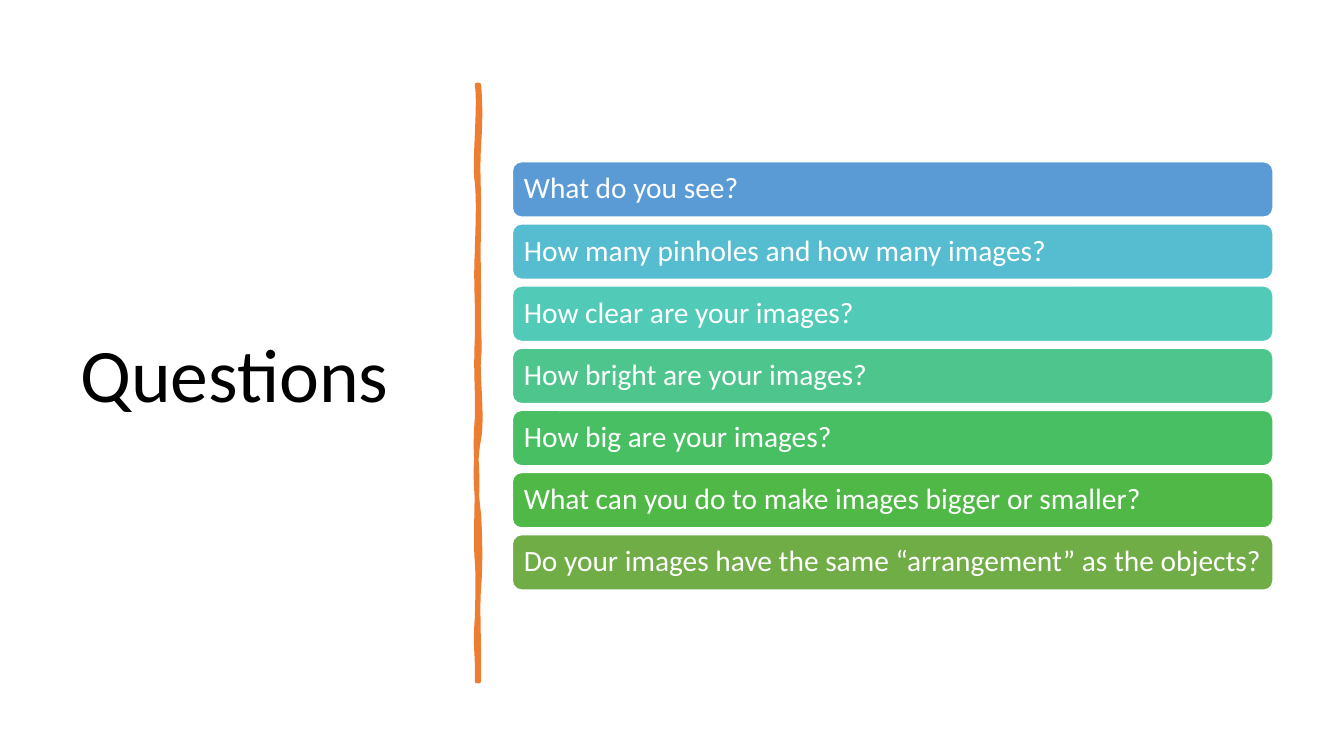
from dataclasses import dataclass

import lxml.etree
import pptx
import pptx.dml.color
import pptx.enum.shapes
import pptx.enum.text
import pptx.oxml.ns
import pptx.slide
import pptx.text.text
import pptx.util

SLIDE_WIDTH = pptx.util.Inches(13.33)
SLIDE_HEIGHT = pptx.util.Inches(7.5)
COLUMNS, ROWS = 160, 90
FONT = "Calibri"
COLOURS = {
    "title": "000000",
    "white": "FFFFFF",
    "brush": "ED7D31",
    "blue": "5B9BD5",
    "sky": "56BCD0",
    "aqua": "52CAB8",
    "mint": "4DC58D",
    "emerald": "49BF64",
    "leaf": "50B846",
    "olive": "70AD47",
}

Point = tuple[float, float]


@dataclass(frozen=True)
class Question:
    wording: str
    colour: str


QUESTIONS = [
    Question("What do you see?", "blue"),
    Question("How many pinholes and how many images?", "sky"),
    Question("How clear are your images?", "aqua"),
    Question("How bright are your images?", "mint"),
    Question("How big are your images?", "emerald"),
    Question("What can you do to make images bigger or smaller?", "leaf"),
    Question("Do your images have the same “arrangement” as the objects?", "olive"),
]
BAR_LEFT, BAR_TOP, BAR_WIDTH, BAR_HEIGHT, BAR_PITCH = 61, 19.25, 90.55, 6.6, 7.4

BRUSH_START: Point = (57, 10.1)
BRUSH_CURVES: list[tuple[Point, Point, Point]] = [
    ((57.2, 12.2), (57.2, 14.3), (57, 17.5)),
    ((56.8, 20.8), (57.1, 23.4), (57, 27.1)),
    ((56.9, 30.8), (57, 31.4), (57, 35.3)),
    ((56.9, 39), (57.2, 41), (57, 42.7)),
    ((56.8, 44.4), (57.5, 49.7), (57, 52.3)),
    ((56.5, 54.8), (56.6, 58.1), (57, 61.2)),
    ((57.2, 64.3), (57.2, 67.7), (57, 70.1)),
    ((56.8, 72.4), (57.1, 78), (57, 81.1)),
    ((56.9, 81.1), (56.8, 81.1), (56.8, 81.1)),
    ((56.9, 77.5), (56.5, 77.3), (56.8, 73.6)),
    ((56.9, 70), (56.9, 68.4), (56.8, 66.8)),
    ((56.6, 65.3), (56.8, 59.4), (56.8, 57.2)),
    ((56.8, 55.1), (56.5, 53.4), (56.8, 49.8)),
    ((56.9, 46.3), (56.6, 44.8), (56.8, 40.2)),
    ((56.9, 35.8), (56.6, 33.7), (56.8, 30)),
    ((56.9, 26.2), (57, 24), (56.8, 21.7)),
    ((56.4, 19.6), (57.2, 12.5), (56.8, 10.1)),
]


def across(columns: float) -> int:
    return round(SLIDE_WIDTH * columns / COLUMNS)


def down(rows: float) -> int:
    return round(SLIDE_HEIGHT * rows / ROWS)


def colour(name: str) -> pptx.dml.color.RGBColor:
    return pptx.dml.color.RGBColor.from_string(COLOURS[name])


def write(frame: pptx.text.text.TextFrame, wording: str, size: float, ink: str) -> None:
    frame.word_wrap = True
    frame.auto_size = pptx.enum.text.MSO_AUTO_SIZE.NONE
    frame.vertical_anchor = pptx.enum.text.MSO_ANCHOR.MIDDLE
    para = frame.paragraphs[0]
    para.alignment = pptx.enum.text.PP_ALIGN.LEFT
    para.line_spacing = 0.9
    span = para.add_run()
    span.text = wording
    span.font.name = FONT
    span.font.size = pptx.util.Pt(size)
    span.font.color.rgb = colour(ink)


def add_title(page: pptx.slide.Slide) -> None:
    title = page.shapes.title
    title.left, title.top = across(8.35), down(8.4)
    title.width, title.height = across(44.85), down(73.3)
    write(title.text_frame, "Questions", 54, "title")


def add_brush(page: pptx.slide.Slide) -> None:
    builder = page.shapes.build_freeform(across(BRUSH_START[0]), down(BRUSH_START[1]))
    ends = [(across(end[0]), down(end[1])) for *_, end in BRUSH_CURVES]
    builder.add_line_segments(ends, close=True)
    brush = builder.convert_to_shape()
    segments = list(brush.element.spPr.iter(pptx.oxml.ns.qn("a:lnTo")))
    for segment, curve in zip(segments, BRUSH_CURVES):
        bend = lxml.etree.Element(pptx.oxml.ns.qn("a:cubicBezTo"))
        for column, row in curve:
            point = lxml.etree.SubElement(bend, pptx.oxml.ns.qn("a:pt"))
            point.set("x", str(across(column) - brush.left))
            point.set("y", str(down(row) - brush.top))
        segment.getparent().replace(segment, bend)
    for spare in segments[len(BRUSH_CURVES):]:
        spare.getparent().remove(spare)
    brush.shadow.inherit = False
    brush.fill.solid()
    brush.fill.fore_color.rgb = colour("brush")
    brush.line.color.rgb = colour("brush")
    brush.line.width = pptx.util.Pt(3.25)
    line = brush.element.spPr.find(pptx.oxml.ns.qn("a:ln"))
    lxml.etree.SubElement(line, pptx.oxml.ns.qn("a:round"))


def add_bar(page: pptx.slide.Slide, question: Question, index: int) -> None:
    bar = page.shapes.add_shape(
        pptx.enum.shapes.MSO_SHAPE.ROUNDED_RECTANGLE,
        across(BAR_LEFT),
        down(BAR_TOP + index * BAR_PITCH),
        across(BAR_WIDTH),
        down(BAR_HEIGHT),
    )
    bar.shadow.inherit = False
    bar.fill.solid()
    bar.fill.fore_color.rgb = colour(question.colour)
    bar.line.color.rgb = colour("white")
    bar.line.width = pptx.util.Pt(1)
    frame = bar.text_frame
    frame.margin_left = across(1.05)
    frame.margin_right = frame.margin_top = frame.margin_bottom = 0
    write(frame, question.wording, 21, "white")


def main() -> None:
    deck = pptx.Presentation()
    deck.slide_width, deck.slide_height = SLIDE_WIDTH, SLIDE_HEIGHT
    page = deck.slides.add_slide(deck.slide_layouts.get_by_name("Title Only"))
    add_title(page)
    add_brush(page)
    for index, question in enumerate(QUESTIONS):
        add_bar(page, question, index)
    deck.save("out.pptx")


if __name__ == "__main__":
    main()
